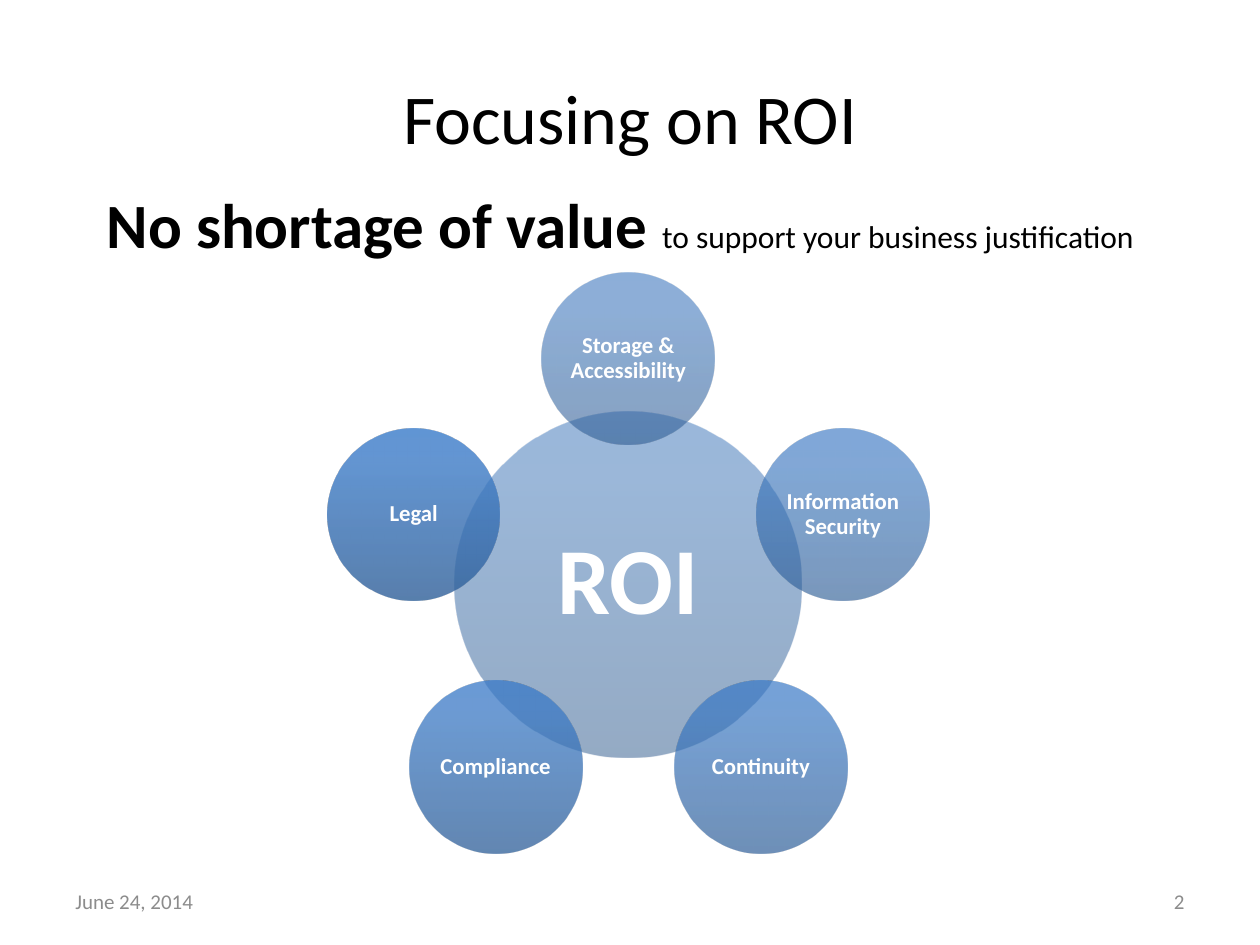
import math

from lxml import etree
from pptx import Presentation
from pptx.dml.color import RGBColor
from pptx.enum import shapes, text
from pptx.oxml.ns import qn
from pptx.util import Cm, Pt

FONT = "Calibri"
BLACK, GREY, WHITE = "000000", "8C8C8C", "FFFFFF"
GRADIENT_POSITIONS = (0, 80, 100)
HUB = ("ROI", 50, ("2A568B", "3770B5", "3570B8"))
# Label, opacity in percent and gradient colours, clockwise from the top
SATELLITES = [
    ("Storage & Accessibility", 56, ("2A588F", "3772BA", "3573BD")),
    ("Information Security", 62, ("2A5A93", "3775BF", "3475C3")),
    ("Continuity", 68, ("2C5C96", "3977C2", "3678C6")),
    ("Compliance", 74, ("2E5E97", "3C7AC4", "397AC8")),
    ("Legal", 80, ("306099", "3E7CC7", "3C7DCA")),
]


def colour(value):
    return RGBColor.from_string(value)


def format_run(run, size, value, bold=False):
    run.font.name = FONT
    run.font.size = Pt(size)
    run.font.bold = bold
    run.font.color.rgb = colour(value)


def add_title(slide, left, top, width, height):
    title = slide.shapes.title
    title.left, title.top, title.width, title.height = left, top, width, height
    frame = title.text_frame
    frame.text = "Focusing on ROI"
    frame.vertical_anchor = text.MSO_ANCHOR.MIDDLE
    frame.paragraphs[0].alignment = text.PP_ALIGN.CENTER
    format_run(frame.paragraphs[0].runs[0], 40, BLACK)


def add_tagline(slide, left, top, width, height):
    frame = slide.shapes.add_textbox(left, top, width, height).text_frame
    frame.word_wrap = False
    frame.auto_size = text.MSO_AUTO_SIZE.SHAPE_TO_FIT_TEXT
    paragraph = frame.paragraphs[0]
    for words, size, bold in (
        ("No shortage of value ", 36, True),
        ("to support your business justification", 18, False),
    ):
        run = paragraph.add_run()
        run.text = words
        format_run(run, size, BLACK, bold)


def add_footer(slide, left, top, width, height):
    box_width = Cm(5.92)
    for words, box_left, alignment in (
        ("June 24, 2014", left, text.PP_ALIGN.LEFT),
        ("2", left + width - box_width, text.PP_ALIGN.RIGHT),
    ):
        frame = slide.shapes.add_textbox(box_left, top, box_width, height).text_frame
        frame.word_wrap = True
        frame.vertical_anchor = text.MSO_ANCHOR.MIDDLE
        frame.text = words
        frame.paragraphs[0].alignment = alignment
        format_run(frame.paragraphs[0].runs[0], 12, GREY)


def fill_gradient(shape, colours, opacity):
    """Fill from bottom to top with translucent stops."""
    shape.fill.gradient()
    shape.fill.gradient_angle = 90
    stops = shape._element.spPr.find(qn("a:gradFill")).find(qn("a:gsLst"))
    for stop in list(stops):
        stops.remove(stop)
    for position, value in zip(GRADIENT_POSITIONS, colours):
        stop = etree.SubElement(stops, qn("a:gs"), pos=str(position * 1000))
        stop_colour = etree.SubElement(stop, qn("a:srgbClr"), val=value)
        etree.SubElement(stop_colour, qn("a:alpha"), val=str(opacity * 1000))


def add_circle(group, center_x, center_y, diameter, content, size, inset):
    label, opacity, colours = content
    circle = group.shapes.add_shape(
        shapes.MSO_SHAPE.OVAL,
        round(center_x - diameter / 2), round(center_y - diameter / 2),
        diameter, diameter,
    )
    circle.shadow.inherit = False
    circle.line.fill.background()
    fill_gradient(circle, colours, opacity)
    frame = circle.text_frame
    frame.word_wrap = True
    frame.vertical_anchor = text.MSO_ANCHOR.MIDDLE
    frame.margin_left = frame.margin_right = inset
    frame.margin_top = frame.margin_bottom = inset
    frame.text = label
    paragraph = frame.paragraphs[0]
    paragraph.alignment = text.PP_ALIGN.CENTER
    paragraph.line_spacing = 0.9
    format_run(paragraph.runs[0], size, WHITE, bold=True)


def add_radial_diagram(slide, left, top, width):
    group = slide.shapes.add_group_shape()
    satellite, orbit = Cm(3.48), Cm(4.55)
    center_x = left + width / 2
    center_y = top + satellite / 2 + orbit
    # Hub
    add_circle(group, center_x, center_y, Cm(6.98), HUB, 54, Cm(0.18))
    # Satellites, evenly spaced around the hub
    for index, content in enumerate(SATELLITES):
        angle = 2 * math.pi * index / len(SATELLITES)
        add_circle(
            group,
            center_x + orbit * math.sin(angle), center_y - orbit * math.cos(angle),
            satellite, content, 13, Cm(0.05),
        )


def main():
    presentation = Presentation()
    presentation.slide_width, presentation.slide_height = Cm(25.4), Cm(19.05)
    slide = presentation.slides.add_slide(presentation.slide_layouts[5])
    add_title(slide, Cm(1.27), Cm(0.76), Cm(22.86), Cm(3.18))
    add_footer(slide, Cm(1.27), Cm(17.65), Cm(22.86), Cm(1.02))
    add_radial_diagram(slide, Cm(6.6), Cm(5.49), Cm(12.13))
    add_tagline(slide, Cm(1.9), Cm(3.61), Cm(21.31), Cm(1.8))
    presentation.save("out.pptx")


if __name__ == "__main__":
    main()
